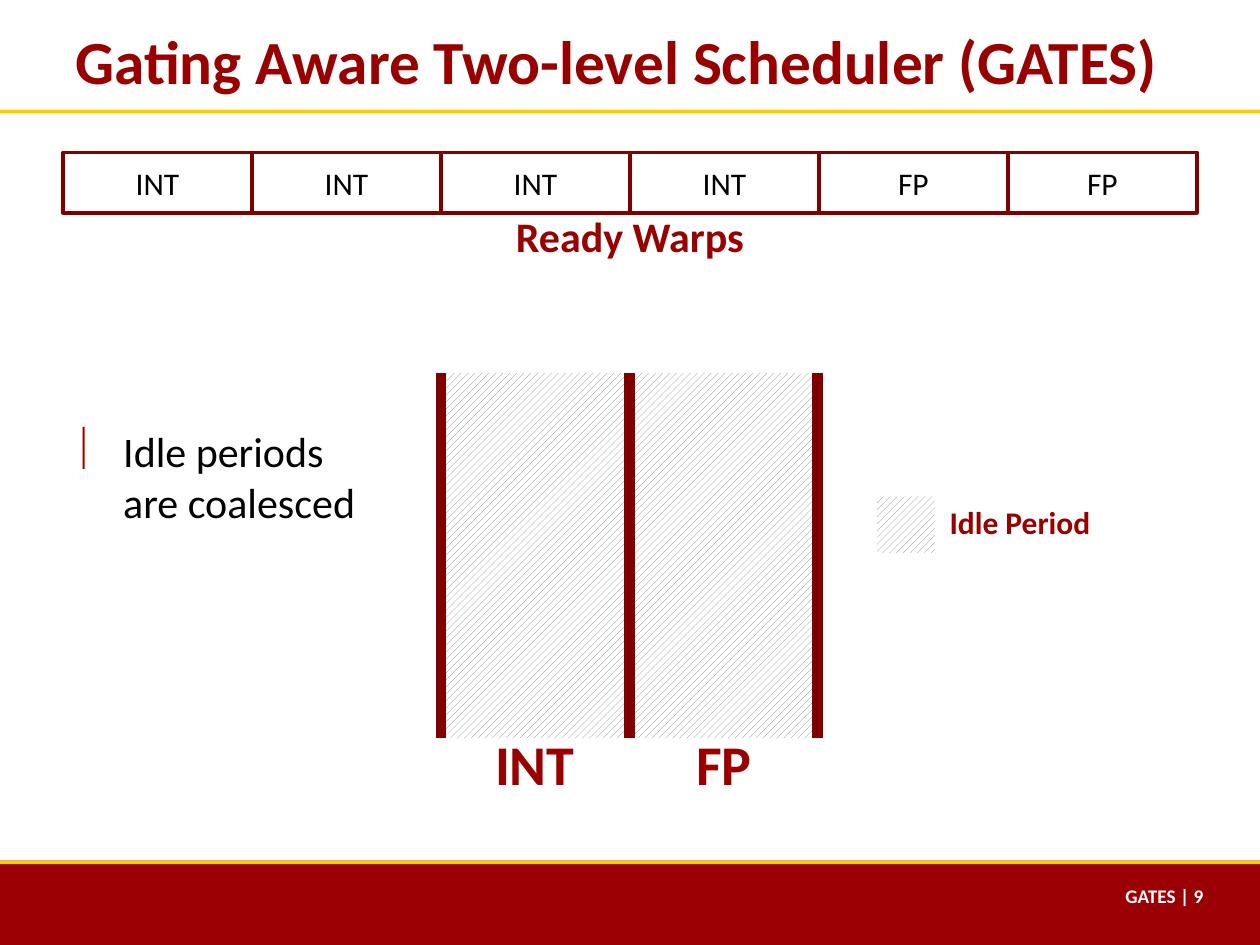
from lxml import etree
from pptx import Presentation
from pptx.dml.color import RGBColor
from pptx.enum.dml import MSO_PATTERN
from pptx.enum.shapes import MSO_CONNECTOR, MSO_SHAPE
from pptx.enum.text import MSO_ANCHOR, PP_ALIGN
from pptx.oxml.ns import qn
from pptx.util import Inches, Pt

CARDINAL = RGBColor(0x99, 0x00, 0x00)
FOOTER_RED = RGBColor(0x9A, 0x00, 0x04)
MAROON = RGBColor(0x80, 0x00, 0x00)
GOLD = RGBColor(0xFF, 0xCC, 0x00)
GRAY = RGBColor(0x80, 0x80, 0x80)
BLACK = RGBColor(0x00, 0x00, 0x00)
WHITE = RGBColor(0xFF, 0xFF, 0xFF)

prs = Presentation()
prs.slide_width, prs.slide_height = Inches(10), Inches(7.5)
s = prs.slides.add_slide(prs.slide_layouts[6])


def add_rect(x, y, w, h, fill=None):
    """Add a borderless rectangle, hatched as an idle period if no fill is given."""
    sp = s.shapes.add_shape(MSO_SHAPE.RECTANGLE, Inches(x), Inches(y), Inches(w), Inches(h))
    sp.shadow.inherit = False
    sp.line.fill.background()
    if fill is None:
        sp.fill.patterned()
        sp.fill.pattern = MSO_PATTERN.WIDE_UPWARD_DIAGONAL
        sp.fill.fore_color.rgb = GRAY
        sp.fill.back_color.rgb = WHITE
    else:
        sp.fill.solid()
        sp.fill.fore_color.rgb = fill
    return sp


def add_text(text, box, size=18, color=CARDINAL, bold=True, align=PP_ALIGN.CENTER,
             anchor=MSO_ANCHOR.MIDDLE, bullet=None):
    """Write text into a shape, or into a new text box at (x, y, w, h)."""
    if isinstance(box, tuple):
        box = s.shapes.add_textbox(*[Inches(v) for v in box])
    tf = box.text_frame
    tf.word_wrap = True
    tf.vertical_anchor = anchor
    p = tf.paragraphs[0]
    p.text = text
    p.alignment = align
    if bullet:
        pPr = p._p.get_or_add_pPr()
        pPr.set("marL", str(Inches(0.38)))
        pPr.set("indent", str(-Inches(0.38)))
        clr = etree.SubElement(pPr, qn("a:buClr"))
        etree.SubElement(clr, qn("a:srgbClr"), val=str(CARDINAL))
        etree.SubElement(pPr, qn("a:buChar"), char=bullet)
    for r in p.runs:
        r.font.name = "Calibri"
        r.font.size = Pt(size)
        r.font.bold = bold
        r.font.color.rgb = color


# Title and footer bands
add_rect(0, 6.83, 10, 0.67, FOOTER_RED)
for y in (6.83, 0.87):
    add_rect(0, y, 10, 0.03, GOLD)
add_text("Gating Aware Two-level Scheduler (GATES)", (0.5, 0.08, 9, 0.79), size=35,
         align=PP_ALIGN.LEFT)
add_text("GATES | 9", (7.87, 6.97, 1.78, 0.35), size=11, color=WHITE,
         align=PP_ALIGN.RIGHT, anchor=MSO_ANCHOR.TOP)

# Queue of ready warps
for i, warp in enumerate(["INT"] * 4 + ["FP"] * 2):
    cell = add_rect(0.5 + 1.5 * i, 1.21, 1.5, 0.48, WHITE)
    cell.line.color.rgb = MAROON
    cell.line.width = Pt(2)
    add_text(warp, cell, color=BLACK, bold=False)
add_text("Ready Warps", (3.5, 1.46, 3, 0.82), size=24)

# Execution lanes, idle all the way
lanes = add_rect(3.5, 2.96, 2.99, 2.9)
for x in (3.5, 5, 6.49):
    wall = s.shapes.add_connector(MSO_CONNECTOR.STRAIGHT, Inches(x), Inches(2.96),
                                  Inches(x), Inches(5.86))
    wall.line.color.rgb = MAROON
    wall.line.width = Pt(6)
    etree.SubElement(wall._element.spPr, qn("a:effectLst"))
    if x == 5:
        wall.begin_connect(lanes, 0)
        wall.end_connect(lanes, 2)
for unit, x in (("INT", 3.5), ("FP", 5)):
    add_text(unit, (x, 5.56, 1.49, 1), size=32)

# Legend
add_rect(6.96, 3.94, 0.46, 0.45)
add_text("Idle Period", (7.35, 3.64, 1.49, 1))

# Takeaway
add_text("Idle periods\vare coalesced", (0.5, 3.33, 2.9, 0.95), size=24, color=BLACK,
         bold=False, align=PP_ALIGN.LEFT, anchor=MSO_ANCHOR.TOP, bullet="|")

prs.save("out.pptx")
